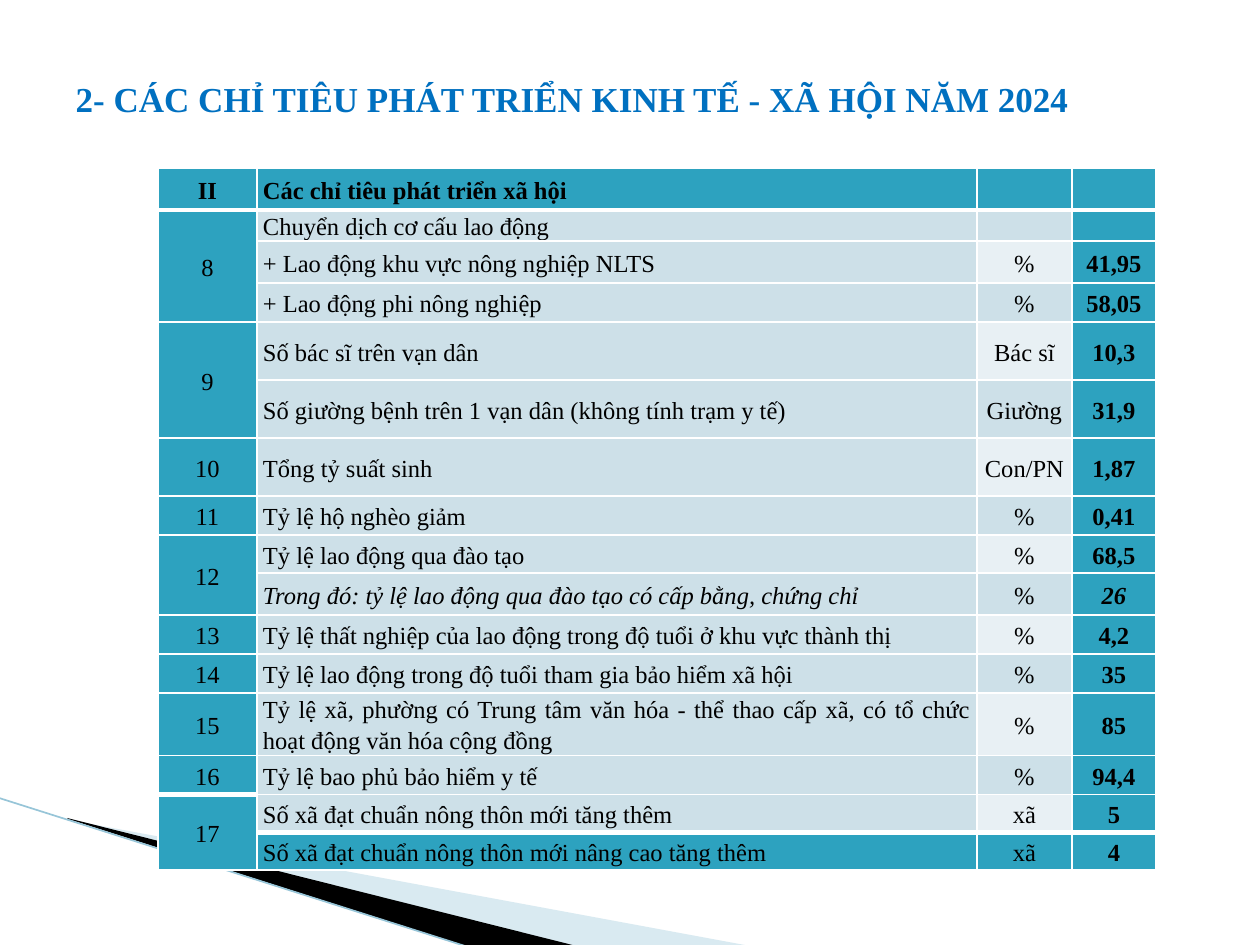
from lxml import etree
from pptx import Presentation
from pptx.dml.color import RGBColor
from pptx.enum.shapes import MSO_CONNECTOR
from pptx.enum.text import MSO_ANCHOR, PP_ALIGN
from pptx.oxml.ns import qn
from pptx.util import Pt

PX = 914400 // 126
LEFT, CENTER, JUSTIFY = PP_ALIGN.LEFT, PP_ALIGN.CENTER, PP_ALIGN.JUSTIFY
MIDDLE = MSO_ANCHOR.MIDDLE
STRAIGHT = MSO_CONNECTOR.STRAIGHT

FONT = "Times New Roman"
BLACK = RGBColor(0x00, 0x00, 0x00)
TITLE_BLUE = RGBColor(0x00, 0x70, 0xC0)
TEAL = RGBColor(0x2D, 0xA2, 0xBF)
BAND_DARK = RGBColor(0xCD, 0xE0, 0xE8)
BAND_LIGHT = RGBColor(0xE8, 0xF0, 0xF4)
WEDGE_BLUE = RGBColor(0xA0, 0xCB, 0xDC)
EDGE_BLUE = RGBColor(0x97, 0xC5, 0xD8)


def set_attributes(target, values):
    for name, value in values.items():
        setattr(target, name, value)


def set_border(cell, side, points):
    properties = cell._tc.get_or_add_tcPr()
    line = etree.SubElement(properties, qn(f"a:ln{side}"), w=str(Pt(points)))
    fill = etree.SubElement(line, qn("a:solidFill"))
    etree.SubElement(fill, qn("a:srgbClr"), val="FFFFFF")


presentation = Presentation()
presentation.slide_width = 1260 * PX
presentation.slide_height = 945 * PX
slide = presentation.slides.add_slide(presentation.slide_layouts[5])

# Corner wedges
WEDGES = [
    ([(69, 820), (750, 946), (575, 946), (69, 819)], WEDGE_BLUE, 40),
    ([(67, 818), (576, 946), (469, 947), (68, 819)], BLACK, 100),
]
for points, color, opacity in WEDGES:
    builder = slide.shapes.build_freeform(*points[0], scale=PX)
    builder.add_line_segments(points[1:], close=True)
    wedge = builder.convert_to_shape()
    wedge.shadow.inherit = False
    wedge.fill.solid()
    wedge.fill.fore_color.rgb = color
    wedge.line.fill.background()
    if opacity < 100:
        color_element = wedge._element.spPr.find(".//" + qn("a:srgbClr"))
        etree.SubElement(color_element, qn("a:alpha"), val=str(opacity * 1000))

edge = slide.shapes.add_connector(STRAIGHT, -1 * PX, 798 * PX, 468 * PX, 947 * PX)
edge.line.color.rgb = EDGE_BLUE
edge.line.width = Pt(0.95)
etree.SubElement(edge._element.spPr, qn("a:effectLst"))

# Title
title = slide.shapes.title
set_attributes(title, {"left": 63 * PX, "top": 38 * PX,
                       "width": 1134 * PX, "height": 120 * PX})
title.text_frame.vertical_anchor = MIDDLE
paragraph = title.text_frame.paragraphs[0]
paragraph.alignment = LEFT
run = paragraph.add_run()
run.text = "2- CÁC CHỈ TIÊU PHÁT TRIỂN KINH TẾ - XÃ HỘI NĂM 2024"
set_attributes(run.font, {"name": FONT, "size": Pt(20), "bold": True})
run.font.color.rgb = TITLE_BLUE

# Indicators: row height in px, number, indicator, unit, value
ROWS = [
    (42, "II", "Các chỉ tiêu phát triển xã hội", "", ""),
    (31, "8", "Chuyển dịch cơ cấu lao động", "", ""),
    (42, "", "+ Lao động khu vực nông nghiệp NLTS", "%", "41,95"),
    (39, "", "+ Lao động phi nông nghiệp", "%", "58,05"),
    (58, "9", "Số bác sĩ trên vạn dân", "Bác sĩ", "10,3"),
    (58, "", "Số giường bệnh trên 1 vạn dân (không tính trạm y tế)", "Giường", "31,9"),
    (58, "10", "Tổng tỷ suất sinh", "Con/PN", "1,87"),
    (39, "11", "Tỷ lệ hộ nghèo giảm", "%", "0,41"),
    (38, "12", "Tỷ lệ lao động qua đào tạo", "%", "68,5"),
    (42, "", "Trong đó: tỷ lệ lao động qua đào tạo có cấp bằng, chứng chỉ", "%", "26"),
    (39, "13", "Tỷ lệ thất nghiệp của lao động trong độ tuổi ở khu vực thành thị", "%", "4,2"),
    (39, "14", "Tỷ lệ lao động trong độ tuổi tham gia bảo hiểm xã hội", "%", "35"),
    (62, "15", "Tỷ lệ xã, phường có Trung tâm văn hóa - thể thao cấp xã, "
               "có tổ chức hoạt động văn hóa cộng đồng", "%", "85"),
    (39, "16", "Tỷ lệ bao phủ bảo hiểm y tế", "%", "94,4"),
    (38, "17", "Số xã đạt chuẩn nông thôn mới tăng thêm", "xã", "5"),
    (38, "", "Số xã đạt chuẩn nông thôn mới nâng cao tăng thêm", "xã", "4"),
]
COLUMN_WIDTHS = [99, 720, 95, 84]
MERGES = [(1, 3), (4, 5), (8, 9), (14, 15)]
LAST_ROW = len(ROWS) - 1
ITALIC_ROW = 9
CELL_FORMAT = {"vertical_anchor": MIDDLE, "margin_left": 6 * PX,
               "margin_right": 6 * PX, "margin_top": 0, "margin_bottom": 0}

table = slide.shapes.add_table(
    len(ROWS), len(COLUMN_WIDTHS), 158 * PX, 168 * PX,
    sum(COLUMN_WIDTHS) * PX, sum(row[0] for row in ROWS) * PX).table
for column, width in zip(table.columns, COLUMN_WIDTHS):
    column.width = width * PX

for row_index, (height, *texts) in enumerate(ROWS):
    table.rows[row_index].height = height * PX
    for column_index, text in enumerate(texts):
        cell = table.cell(row_index, column_index)
        set_attributes(cell, CELL_FORMAT)

        # Thick rules under the header, above the total row and above number 17
        thick_top = row_index == 1 or (
            row_index == (14 if column_index == 0 else LAST_ROW))
        thick_bottom = row_index == 0 or (
            row_index == (13 if column_index == 0 else LAST_ROW - 1))
        for side, points in (("L", 1), ("R", 1), ("T", 3 if thick_top else 1),
                             ("B", 3 if thick_bottom else 1)):
            set_border(cell, side, points)

        cell.fill.solid()
        if row_index in (0, LAST_ROW) or column_index in (0, 3):
            cell.fill.fore_color.rgb = TEAL
        elif column_index == 2 and row_index % 2 == 0:
            cell.fill.fore_color.rgb = BAND_LIGHT
        else:
            cell.fill.fore_color.rgb = BAND_DARK

        paragraph = cell.text_frame.paragraphs[0]
        if not text:
            etree.SubElement(paragraph._p, qn("a:endParaRPr"), sz="1400")
            continue
        alignment = JUSTIFY if column_index == 1 else CENTER
        set_attributes(paragraph, {"alignment": alignment, "line_spacing": 1.15,
                                   "space_before": Pt(2), "space_after": Pt(2)})
        run = paragraph.add_run()
        run.text = text
        set_attributes(run.font, {
            "name": FONT, "size": Pt(14),
            "bold": row_index == 0 or column_index == 3,
            "italic": row_index == ITALIC_ROW and column_index in (1, 3)})
        run.font.color.rgb = BLACK

table.cell(14, 1).text_frame.paragraphs[0].alignment = LEFT
for first_row, last_row in MERGES:
    table.cell(first_row, 0).merge(table.cell(last_row, 0))

presentation.save("out.pptx")
